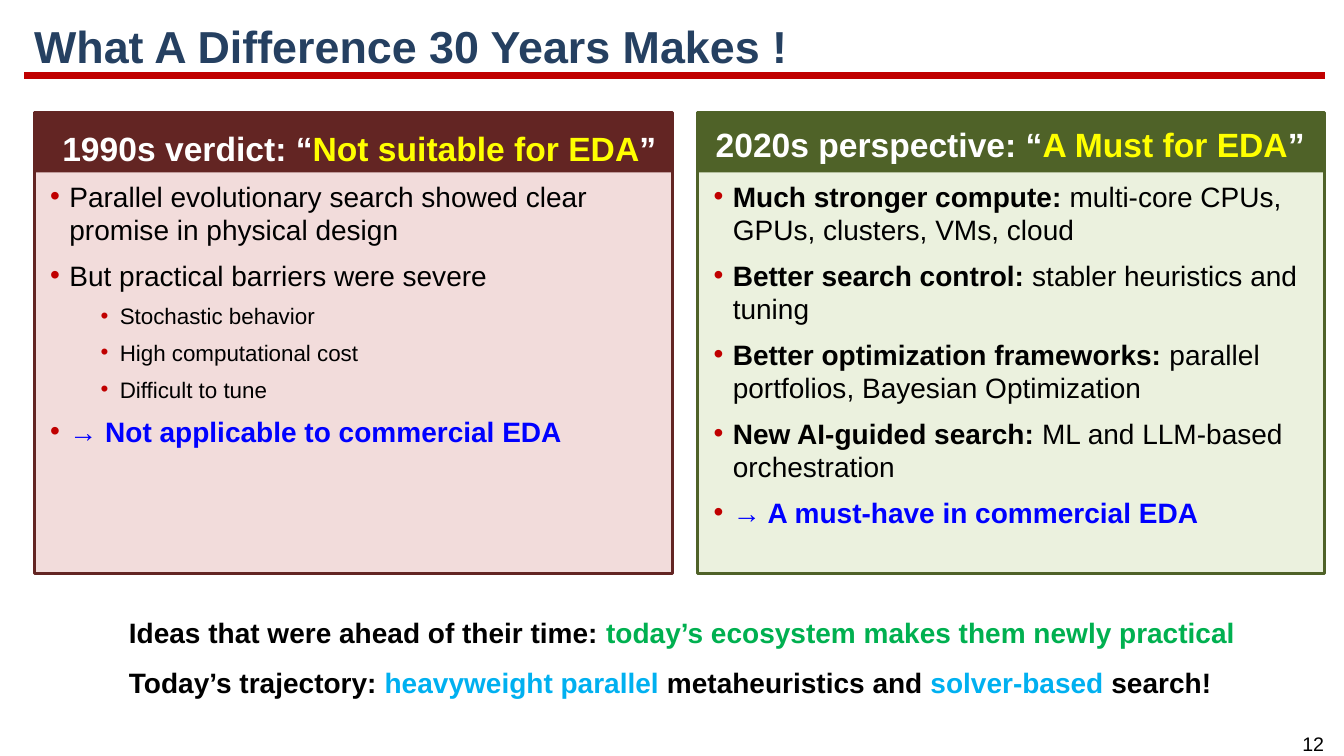
from pptx import Presentation
from pptx.util import Inches, Pt
from pptx.dml.color import RGBColor
from pptx.enum.shapes import MSO_SHAPE as Shape, MSO_CONNECTOR as Line
from pptx.enum.text import MSO_ANCHOR as Anchor, PP_ALIGN as Align
from pptx.oxml.ns import qn
from lxml.etree import SubElement

HUES = dict(
    black="000000", white="FFFFFF", navy="254061", red="C00000",
    yellow="FFFF00", blue="0000FF", green="00B050", sky="00B0F0",
    wine="632523", rose="F2DCDB", olive="4F6228", mint="EBF1DE",
)

# Content: a run is (text, colour, bold); a bullet is (level, runs)
TITLE = "What A Difference 30 Years Makes !"
PAGE = "12"


def point(head, rest):
    return 0, [(head, "black", True), (rest, "black", False)]


def plain(level, text):
    return level, [(text, "black", False)]


def result(text):
    return 0, [("→ " + text, "blue", True)]


PANELS = [
    dict(left=0.34, width=6.33, dark="wine", pale="rose", head_at=(0.52, 1.22),
         head=("1990s verdict: “", "Not suitable for EDA"),
         items=[
             plain(0, "Parallel evolutionary search showed clear promise in physical design"),
             plain(0, "But practical barriers were severe"),
             plain(1, "Stochastic behavior"),
             plain(1, "High computational cost"),
             plain(1, "Difficult to tune"),
             result("Not applicable to commercial EDA"),
         ]),
    dict(left=6.92, width=6.22, dark="olive", pale="mint", head_at=(7, 1.18),
         head=("2020s perspective: “", "A Must for EDA"),
         items=[
             point("Much stronger compute: ", "multi-core CPUs, GPUs, clusters, VMs, cloud"),
             point("Better search control: ", "stabler heuristics and tuning"),
             point("Better optimization frameworks: ",
                   "parallel portfolios, Bayesian Optimization"),
             point("New AI-guided search:", " ML and LLM-based orchestration"),
             result("A must-have in commercial EDA"),
         ]),
]
CLOSING = [
    [("Ideas that were ahead of their time: ", "black", True),
     ("today’s ecosystem makes them newly practical", "green", True)],
    [("Today’s trajectory: ", "black", True),
     ("heavyweight parallel", "sky", True),
     (" metaheuristics and ", "black", True),
     ("solver-based", "sky", True),
     (" search!", "black", True)],
]

# Layout in inches; text sizes and gaps in points by bullet level
TOP, TALL, BAND = 1.12, 4.57, 0.59
BODY_TOP, BODY_W, BODY_H = 1.73, 6.1, 3.8
SIZES, GAPS, INDENTS, HANG = (20, 16), (8.4, 7.2), (0.25, 0.75), 0.19

deck = Presentation()
deck.slide_width, deck.slide_height = Inches(13.33), Inches(7.5)
slide = deck.slides.add_slide(deck.slide_layouts[6])


def hue(name):
    return RGBColor.from_string(HUES[name])


def add_text(left, top, width, height):
    box = slide.shapes.add_textbox(*map(Inches, (left, top, width, height)))
    box.text_frame.word_wrap = True
    return box.text_frame


def add_runs(para, runs, size):
    para.font.name, para.font.size = "Arial", Pt(size)
    for text, color, bold in runs:
        run = para.add_run()
        run.text = text
        run.font.color.rgb, run.font.bold = hue(color), bold


def add_rect(left, width, height, fill, edge=None):
    rect = slide.shapes.add_shape(
        Shape.RECTANGLE, *map(Inches, (left, TOP, width, height)))
    rect.shadow.inherit = False
    rect.fill.solid()
    rect.fill.fore_color.rgb = hue(fill)
    if edge:
        rect.line.color.rgb, rect.line.width = hue(edge), Pt(2)
    else:
        rect.line.fill.background()


def add_bullet(para, level):
    props = para._p.get_or_add_pPr()
    props.set("marL", str(Inches(INDENTS[level])))
    props.set("indent", str(-Inches(HANG)))
    tint = SubElement(props, qn("a:buClr"))
    SubElement(tint, qn("a:srgbClr"), val=HUES["red"])
    SubElement(props, qn("a:buFont"), typeface="Arial")
    SubElement(props, qn("a:buChar"), char="•")
    para.level = level


# Title, rule and page number
rule = slide.shapes.add_connector(
    Line.STRAIGHT, *map(Inches, (0.24, 0.75, 13.14, 0.75)))
rule.line.color.rgb, rule.line.width = hue("red"), Pt(4.5)
SubElement(rule._element.spPr, qn("a:effectLst"))

title = add_text(0.24, 0.16, 12.91, 0.65)
title.vertical_anchor = Anchor.MIDDLE
title.paragraphs[0].line_spacing = 0.9
add_runs(title.paragraphs[0], [(TITLE, "navy", True)], 32)

page = add_text(12.73, 7.21, 0.59, 0.34).paragraphs[0]
page.alignment = Align.CENTER
add_runs(page, [(PAGE, "black", False)], 14)

# Two panels: body, heading band, heading and bullets
for panel in PANELS:
    left, width = panel["left"], panel["width"]
    add_rect(left, width, TALL, panel["pale"], panel["dark"])
    add_rect(left, width, BAND, panel["dark"])

    lead, quote = panel["head"]
    head = add_text(*panel["head_at"], 6.4, 0.5).paragraphs[0]
    add_runs(head, [(lead, "white", True), (quote, "yellow", True),
                    ("”", "white", True)], 24)

    body = add_text(left, BODY_TOP, BODY_W, BODY_H)
    for i, (level, runs) in enumerate(panel["items"]):
        para = body.add_paragraph() if i else body.paragraphs[0]
        add_bullet(para, level)
        if i:
            para.space_before = Pt(GAPS[level])
        add_runs(para, runs, SIZES[level])

# Closing lines
closing = add_text(1.18, 5.89, 11.32, 1.05).paragraphs[0]
closing.line_spacing = 1.5
for i, runs in enumerate(CLOSING):
    if i:
        closing.add_line_break()
    add_runs(closing, runs, 20)

deck.save("out.pptx")
